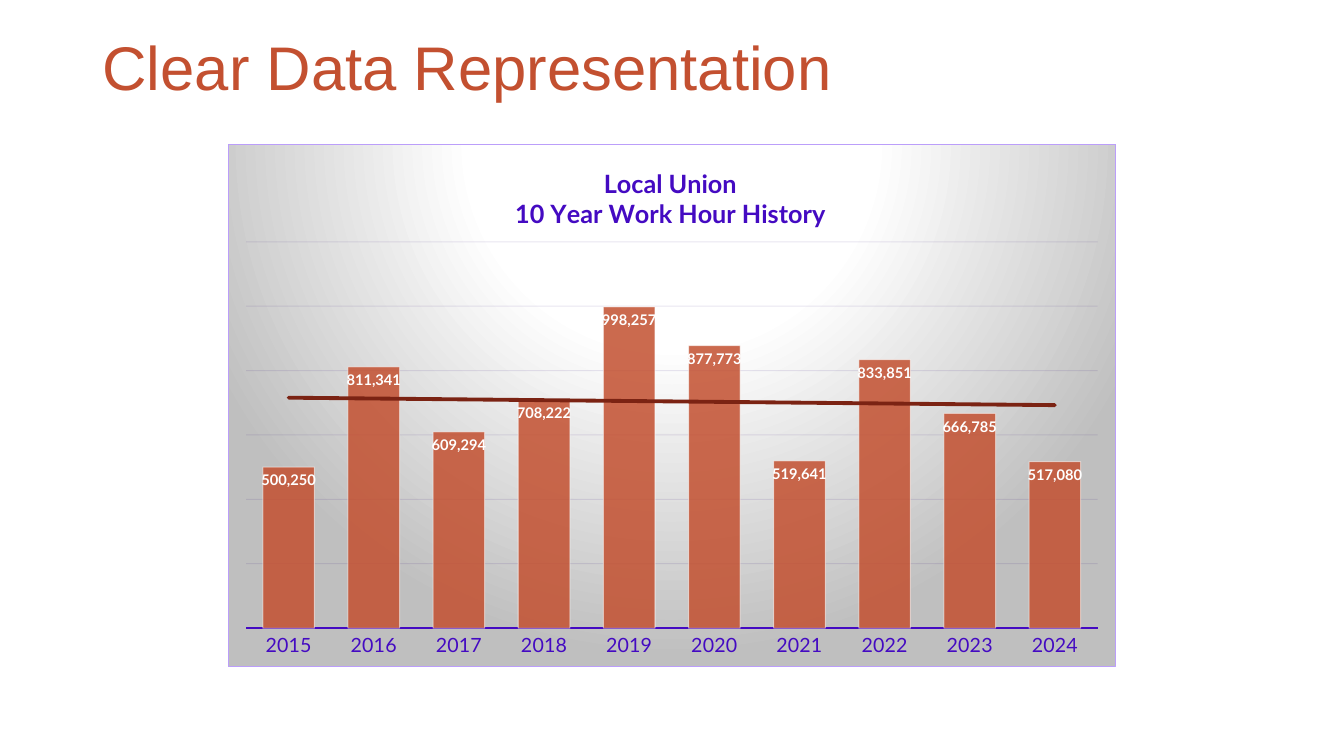
"""Build a slide with a ten-year work hour column chart and its trend line."""
from dataclasses import dataclass
from typing import Optional

from lxml.etree import SubElement
from pptx import Presentation
from pptx.chart.chart import Chart
from pptx.chart.data import CategoryChartData
from pptx.dml.color import RGBColor
from pptx.dml.line import LineFormat
from pptx.enum.chart import XL_CHART_TYPE, XL_LABEL_POSITION, XL_TICK_LABEL_POSITION, XL_TICK_MARK
from pptx.enum.text import MSO_ANCHOR, PP_ALIGN
from pptx.oxml import parse_xml
from pptx.oxml.ns import nsdecls, qn
from pptx.slide import Slide
from pptx.text.text import Font
from pptx.util import Pt


@dataclass(frozen=True)
class Theme:
    heading_font: str = "Arial"
    chart_font: str = "Lato"
    accent: str = "C35030"
    trend: str = "7B2313"
    purple: str = "440AC2"
    dark_purple: str = "220561"
    grid: str = "290674"
    border: str = "BB9EFA"
    white: str = "FFFFFF"
    grey: str = "BFBFBF"
    heading_size: float = 44
    chart_title_size: float = 18
    axis_size: float = 14
    label_size: float = 10.5
    base_size: float = 10


@dataclass(frozen=True)
class YearHours:
    year: str
    hours: int


@dataclass(frozen=True)
class Area:
    left: float
    top: float
    width: Optional[float] = None
    height: Optional[float] = None


THEME = Theme()
HISTORY = [
    YearHours("2015", 500250),
    YearHours("2016", 811341),
    YearHours("2017", 609294),
    YearHours("2018", 708222),
    YearHours("2019", 998257),
    YearHours("2020", 877773),
    YearHours("2021", 519641),
    YearHours("2022", 833851),
    YearHours("2023", 666785),
    YearHours("2024", 517080),
]


def style_font(font: Font, name: str, size: float, color: str, bold: bool = False) -> None:
    font.name = name
    font.size = Pt(size)
    font.bold = bold
    font.color.rgb = RGBColor.from_string(color)


def style_line(line: LineFormat, color: str, width: float) -> None:
    line.width = Pt(width)
    line.color.rgb = RGBColor.from_string(color)


def set_opacity(properties, percent: int) -> None:
    color = properties.find(".//" + qn("a:srgbClr"))
    SubElement(color, qn("a:alpha"), val=str(percent * 1000))


def set_layout(parent, index: int, area: Area, inner: bool = False) -> None:
    for layout in parent.findall(qn("c:layout")):
        parent.remove(layout)
    layout = parse_xml(f"<c:layout {nsdecls('c')}><c:manualLayout/></c:layout>")
    settings = {"layoutTarget": "inner" if inner else None, "xMode": "edge", "yMode": "edge",
                "x": area.left, "y": area.top, "w": area.width, "h": area.height}
    for tag, value in settings.items():
        if value is not None:
            SubElement(layout[0], qn(f"c:{tag}"), val=str(value))
    parent.insert(index, layout)


def add_heading(page: Slide, text: str) -> None:
    heading = page.shapes.title
    heading.left, heading.top, heading.width, heading.height = Pt(66), Pt(-1.5), Pt(828), Pt(104.4)
    heading.text_frame.text = text
    heading.text_frame.vertical_anchor = MSO_ANCHOR.MIDDLE
    para = heading.text_frame.paragraphs[0]
    para.alignment = PP_ALIGN.LEFT
    para.line_spacing = 0.9
    style_font(para.runs[0].font, THEME.heading_font, THEME.heading_size, THEME.accent)


def format_title(chart: Chart, text: str) -> None:
    chart.has_title = True
    frame = chart.chart_title.text_frame
    frame.text = text
    for para in frame.paragraphs:
        para.alignment = PP_ALIGN.CENTER
        style_font(para.runs[0].font, THEME.chart_font, THEME.chart_title_size, THEME.purple, bold=True)
    set_layout(chart.element.find(".//" + qn("c:title")), 1, Area(0.32, 0.035))


def format_axes(chart: Chart) -> None:
    years = chart.category_axis
    years.major_tick_mark = XL_TICK_MARK.NONE
    years.tick_label_position = XL_TICK_LABEL_POSITION.NEXT_TO_AXIS
    style_line(years.format.line, THEME.purple, 1.5)
    style_font(years.tick_labels.font, THEME.chart_font, THEME.axis_size, THEME.purple)

    hours = chart.value_axis
    hours.visible = False
    hours.minimum_scale, hours.maximum_scale, hours.major_unit = 0, 1_200_000, 200_000
    hours.has_major_gridlines = True
    style_line(hours.major_gridlines.format.line, THEME.grid, 0.75)
    set_opacity(chart.element.find(".//" + qn("c:majorGridlines")), 10)


def format_columns(chart: Chart) -> None:
    plot = chart.plots[0]
    plot.gap_width = 65
    plot.vary_by_categories = False
    series = plot.series[0]
    series.format.fill.solid()
    series.format.fill.fore_color.rgb = RGBColor.from_string(THEME.accent)
    style_line(series.format.line, THEME.white, 0.75)
    properties = chart.element.find(".//" + qn("c:ser") + "/" + qn("c:spPr"))
    set_opacity(properties.find(qn("a:solidFill")), 85)
    set_opacity(properties.find(qn("a:ln")), 50)
    labels = series.data_labels
    labels.show_value = True
    labels.position = XL_LABEL_POSITION.INSIDE_END
    labels.number_format = "#,##0"
    labels.number_format_is_linked = False
    style_font(labels.font, THEME.chart_font, THEME.label_size, THEME.white, bold=True)


def add_trend(chart: Chart) -> None:
    trend = parse_xml(
        f'<c:trendline {nsdecls("c", "a")}><c:spPr><a:ln w="{Pt(2.75)}" cap="rnd"><a:solidFill>'
        f'<a:srgbClr val="{THEME.trend}"/></a:solidFill></a:ln></c:spPr>'
        '<c:trendlineType val="linear"/><c:dispRSqr val="0"/><c:dispEq val="0"/></c:trendline>')
    chart.element.find(".//" + qn("c:ser") + "/" + qn("c:cat")).addprevious(trend)


def fill_background(chart: Chart) -> None:
    stops = "".join(
        f'<a:gs pos="{percent * 1000}"><a:srgbClr val="{color}"/></a:gs>'
        for percent, color in ((0, THEME.white), (39, THEME.white), (100, THEME.grey)))
    background = parse_xml(
        f'<c:spPr {nsdecls("c", "a")}><a:gradFill><a:gsLst>{stops}</a:gsLst><a:path path="circle">'
        '<a:fillToRect l="50000" t="-80000" r="50000" b="180000"/></a:path></a:gradFill>'
        f'<a:ln w="{Pt(0.75)}"><a:solidFill><a:srgbClr val="{THEME.border}"/></a:solidFill></a:ln></c:spPr>')
    chart.element.find(qn("c:chart")).addnext(background)


def add_history_chart(page: Slide) -> None:
    data = CategoryChartData(number_format="#,##0")
    data.categories = [entry.year for entry in HISTORY]
    data.add_series("Series 1", [entry.hours for entry in HISTORY])
    chart = page.shapes.add_chart(
        XL_CHART_TYPE.COLUMN_CLUSTERED, Pt(162.7), Pt(103), Pt(634.3), Pt(373.7), data).chart
    chart.has_legend = False
    style_font(chart.font, THEME.chart_font, THEME.base_size, THEME.dark_purple)
    format_title(chart, "Local Union\n10 Year Work Hour History")
    format_axes(chart)
    format_columns(chart)
    add_trend(chart)
    fill_background(chart)
    set_layout(chart.element.find(".//" + qn("c:plotArea")), 0, Area(0.02, 0.186, 0.96, 0.74), inner=True)


def main() -> None:
    deck = Presentation()
    deck.slide_width, deck.slide_height = Pt(960), Pt(540)
    page = deck.slides.add_slide(deck.slide_layouts[5])
    add_heading(page, "Clear Data Representation")
    add_history_chart(page)
    deck.save("out.pptx")


if __name__ == "__main__":
    main()
